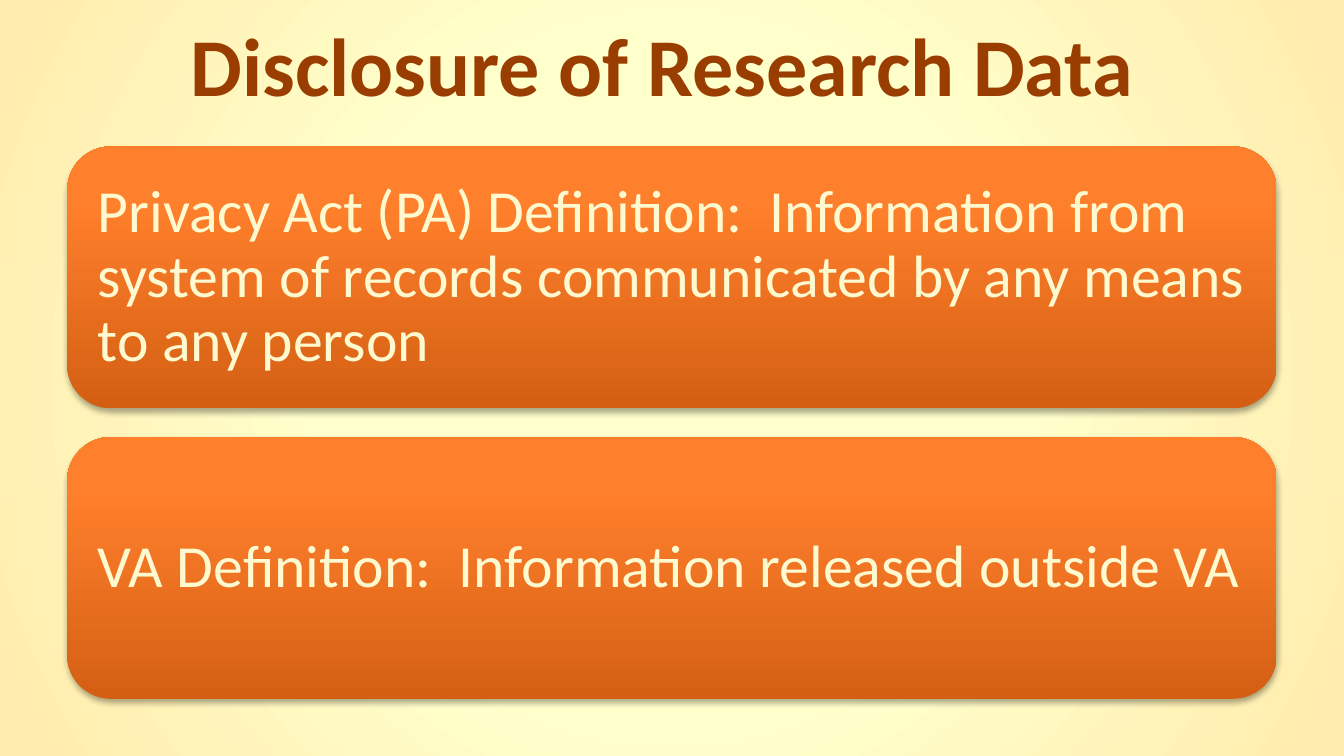
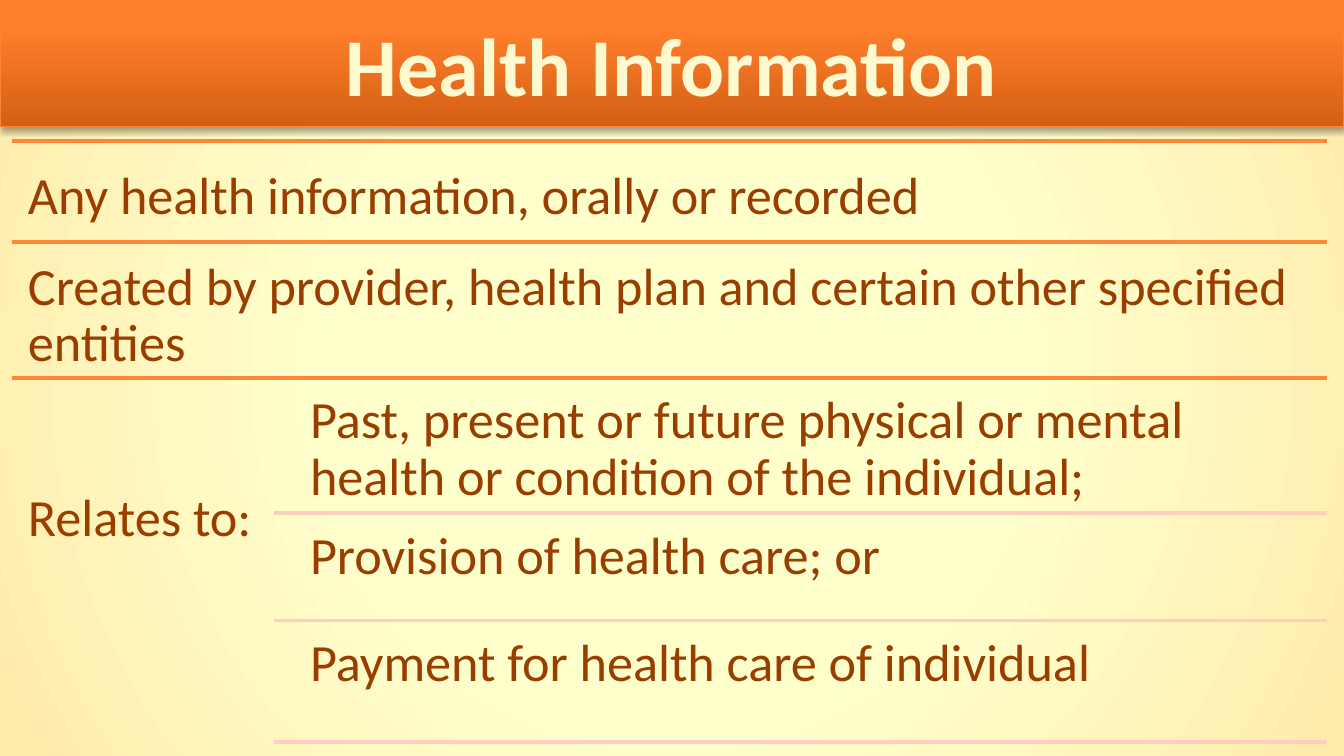
from dataclasses import dataclass

from lxml.etree import SubElement
from pptx import Presentation
from pptx.dml.color import RGBColor
from pptx.enum.shapes import MSO_CONNECTOR, MSO_SHAPE
from pptx.enum.text import MSO_ANCHOR, PP_ALIGN
from pptx.oxml.ns import qn
from pptx.util import Cm, Pt

WIDTH, HEIGHT = 25.4, 14.29


@dataclass(frozen=True)
class Theme:
    font: str = "Calibri"
    brown: str = "993D00"
    cream: str = "FFF9D0"
    orange: str = "FE8637"
    pink: str = "FFCEBF"
    band_edge: str = "FD8231"
    glow: tuple = ((45, "FFFFCC"), (100, "FFEBAB"), (100, "F2F2F2"))
    flame: tuple = ((0, "D45F13"), (80, "FF802C"), (100, "FF812E"))
    title_size: int = 44
    panel_size: int = 32
    row_size: int = 28
    rule_width: float = 2
    title_height: float = 2.39


def add(parent, tag, **attrs):
    return SubElement(parent, qn(tag), {k: str(v) for k, v in attrs.items()})


def set_gradient(fill, element, stops, angle=None):
    """Fill with the stops: linear at the angle, or circular from the centre."""
    fill.gradient()
    grad = next(element.iter(qn("a:gradFill")))
    for child in list(grad):
        grad.remove(child)
    gs_list = add(grad, "a:gsLst")
    for position, color in stops:
        gs = add(gs_list, "a:gs", pos=position * 1000)
        add(gs, "a:srgbClr", val=color)
    if angle is None:
        circle = add(grad, "a:path", path="circle")
        add(circle, "a:fillToRect", l=50000, t=50000, r=50000, b=50000)
    else:
        add(grad, "a:lin", ang=angle * 60000, scaled=0)


def set_shadow(shape):
    shape.shadow.inherit = False
    effects = next(shape.element.iter(qn("a:effectLst")))
    outer = add(effects, "a:outerShdw", blurRad=Pt(3.1), dist=Pt(1.8),
                dir=90 * 60000, rotWithShape=0)
    color = add(outer, "a:srgbClr", val="000000")
    add(color, "a:alpha", val=35000)


class Deck:
    def __init__(self, theme):
        self.theme = theme
        self.prs = Presentation()
        self.prs.slide_width, self.prs.slide_height = Cm(WIDTH), Cm(HEIGHT)
        self.s = None

    def slide(self):
        self.s = self.prs.slides.add_slide(self.prs.slide_layouts[6])
        set_gradient(self.s.background.fill, self.s.element, self.theme.glow)

    def set_text(self, sp, text, *, size, color, bold=False,
                 align=PP_ALIGN.LEFT, anchor=MSO_ANCHOR.TOP,
                 inset=(0.25, 0.13), spacing=0.9):
        tf = sp.text_frame
        tf.word_wrap = True
        tf.vertical_anchor = anchor
        tf.margin_left = tf.margin_right = Cm(inset[0])
        tf.margin_top = tf.margin_bottom = Cm(inset[1])
        p = tf.paragraphs[0]
        p.alignment, p.line_spacing = align, spacing
        r = p.add_run()
        r.text = text
        r.font.name, r.font.size, r.font.bold = self.theme.font, Pt(size), bold
        r.font.color.rgb = RGBColor.from_string(color)

    def text(self, x, y, w, h, text, **style):
        box = self.s.shapes.add_textbox(Cm(x), Cm(y), Cm(w), Cm(h))
        self.set_text(box, text, **style)

    def block(self, x, y, w, h, kind, edge=None):
        """Shadowed orange shape, outlined only if an edge colour is given."""
        sp = self.s.shapes.add_shape(kind, Cm(x), Cm(y), Cm(w), Cm(h))
        set_gradient(sp.fill, sp.element, self.theme.flame, angle=270)
        if edge:
            sp.line.color.rgb = RGBColor.from_string(edge)
            sp.line.width = Pt(0.75)
        else:
            sp.line.fill.background()
        set_shadow(sp)
        return sp

    def rule(self, x, y, end, color):
        line = self.s.shapes.add_connector(
            MSO_CONNECTOR.STRAIGHT, Cm(x), Cm(y), Cm(end), Cm(y))
        line.line.color.rgb = RGBColor.from_string(color)
        line.line.width = Pt(self.theme.rule_width)
        add(line.element.spPr, "a:effectLst")

    def title(self, text, banded=False):
        t = self.theme
        place = 0, 0, WIDTH, t.title_height
        style = dict(size=t.title_size, bold=True, align=PP_ALIGN.CENTER,
                     anchor=MSO_ANCHOR.MIDDLE, spacing=1.0)
        if banded:
            band = self.block(*place, MSO_SHAPE.RECTANGLE, edge=t.band_edge)
            self.set_text(band, text, color=t.cream, **style)
        else:
            self.text(*place, text, color=t.brown, **style)


def disclosure_slide(deck):
    t = deck.theme
    deck.slide()
    left, top, width, height, step, pad = 1.27, 2.77, 22.86, 4.95, 5.49, 0.25
    definitions = (
        "Privacy Act (PA) Definition:  Information from system of records "
        "communicated by any means to any person",
        "VA Definition:  Information released outside VA",
    )
    for i, definition in enumerate(definitions):
        y = top + i * step
        deck.block(left, y, width, height, MSO_SHAPE.ROUNDED_RECTANGLE)
        deck.text(left + pad, y + pad, width - 2 * pad + 0.02,
                  height - 2 * pad + 0.02, definition, size=t.panel_size,
                  color=t.cream, anchor=MSO_ANCHOR.MIDDLE, inset=(0.33, 0.33))
    deck.title("Disclosure of Research Data ")


def health_slide(deck):
    t = deck.theme
    deck.slide()
    left, right, sub_left, sub_text = 0.23, 25.07, 5.18, 5.56
    style = dict(size=t.row_size, color=t.brown, inset=(0.3, 0.3))
    # rule y, text y, text width, anchor, text
    rows = (
        (2.67, 2.9, 24.87, MSO_ANCHOR.TOP,
         "Any health information, orally or recorded"),
        (4.57, 4.62, 24.87, MSO_ANCHOR.TOP,
         "Created by provider, health plan and certain other specified entities"),
        (7.14, 7.92, 4.98, MSO_ANCHOR.MIDDLE, "Relates to:"),
    )
    for rule_y, text_y, width, anchor, text in rows:
        deck.rule(left, rule_y, right, t.orange)
        deck.text(left, text_y, width, 3.81, text, anchor=anchor, **style)
    # top, bottom, text
    subjects = (
        (7.14, 9.7, "Past, present or future physical or mental health "
                    "or condition of the individual;"),
        (9.7, 11.73, "Provision of health care; or"),
        (11.73, 14.02, "Payment for health care of individual"),
    )
    for top, bottom, text in subjects:
        deck.text(sub_text, top, right - sub_text, 1.19, text, **style)
        deck.rule(sub_left, bottom, right, t.pink)
    deck.title("Health Information", banded=True)


def main():
    deck = Deck(Theme())
    disclosure_slide(deck)
    health_slide(deck)
    deck.prs.save("out.pptx")


if __name__ == "__main__":
    main()
